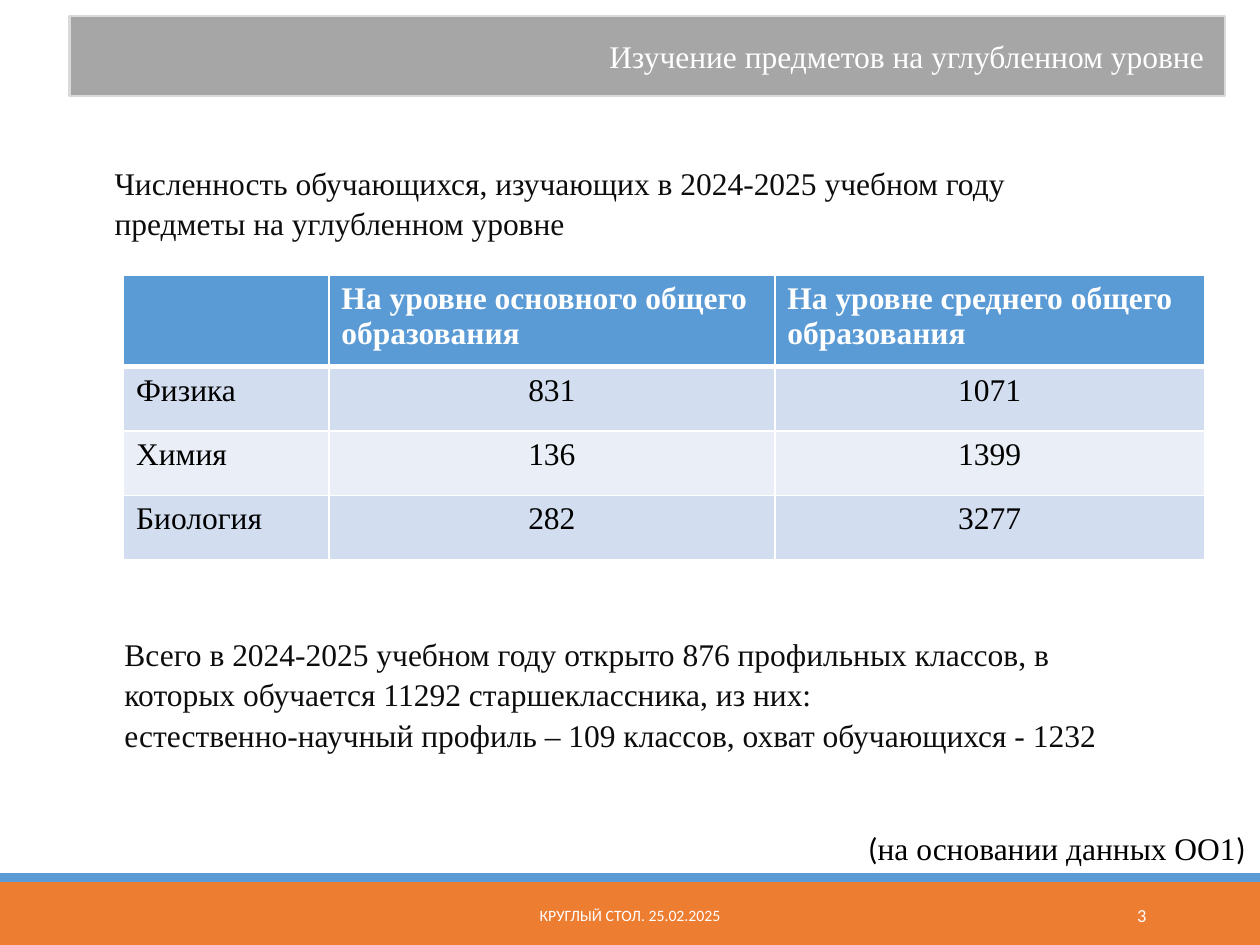
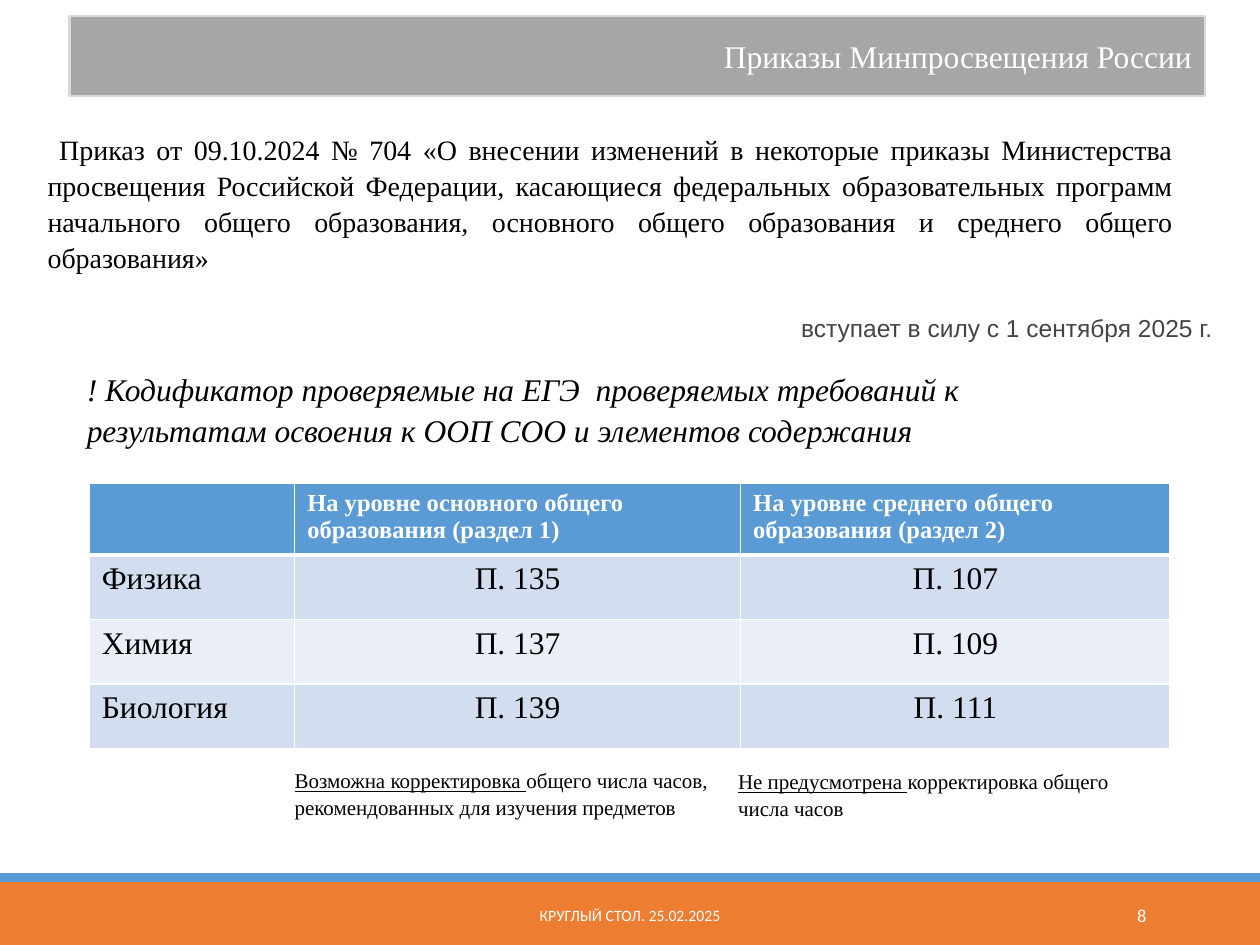
import dataclasses
import pptx
import pptx.util
import pptx.dml.color
import pptx.enum.shapes
import pptx.enum.text
import pptx.oxml
import pptx.oxml.ns

Cm, Pt = pptx.util.Cm, pptx.util.Pt
Align = pptx.enum.text.PP_ALIGN
Anchor = pptx.enum.text.MSO_ANCHOR
rgb = pptx.dml.color.RGBColor.from_string


@dataclasses.dataclass(frozen=True)
class Theme:
    serif: str = "Times New Roman"
    sans: str = "Calibri"
    plain: str = "Arial"
    white: str = "FFFFFF"
    black: str = "000000"
    ink: str = "0D0D0D"
    soft: str = "444444"
    blue: str = "5B9BD5"
    orange: str = "ED7D31"
    grey: str = "A6A6A6"
    edge: str = "D9D9D9"
    bands: tuple = ("D2DEEF", "EAEFF7")
    large: float = 18
    body: float = 16
    mid: float = 14
    small: float = 12
    page: float = 10.5
    foot: float = 9
    pitch: float = 1.07


look = Theme()


def write(par, text, size=look.large, color=look.black, font=look.serif, **style):
    run = par.add_run()
    run.text = text
    run.font.size = Pt(size)
    run.font.name = font
    run.font.color.rgb = rgb(color)
    for key, value in style.items():
        setattr(run.font, key, value)


def frame(slide, place, anchor=Anchor.TOP, align=Align.LEFT):
    text = slide.shapes.add_textbox(*map(Cm, place)).text_frame
    text.word_wrap = True
    text.vertical_anchor = anchor
    par = text.paragraphs[0]
    par.alignment = align
    par.line_spacing = look.pitch
    return par


pages = [
    dict(
        title="Изучение предметов на углубленном уровне ",
        width=23.29,
        number="3",
        spot=(2.49, 5.54),
        top=1.85,
        size=look.large,
        rows=[
            ["", "На уровне основного общего образования",
             "На уровне среднего общего образования"],
            ["Физика", "831", "1071"],
            ["Химия", "136", "1399"],
            ["Биология", "282", "3277"],
        ],
        notes=[
            ((2.06, 3.12, 20.85, 1.8), Align.LEFT, [[
                ("Численность обучающихся, изучающих в 2024-2025 учебном году "
                 "предметы на углубленном уровне", dict(color=look.ink))]]),
            ((2.26, 12.62, 20.85, 2.57), Align.LEFT, [
                [("Всего в 2024-2025 учебном году открыто 876 профильных классов, "
                  "в которых обучается 11292 старшеклассника, из них:",
                  dict(color=look.ink))],
                [("естественно-научный профиль – 109 классов, "
                  "охват обучающихся - 1232", dict(color=look.ink))]]),
            ((17.25, 16.54, 8.15, 1.02), Align.LEFT, [[
                ("(", dict(font=look.sans)),
                ("на основании данных ОО1", {}),
                (")", dict(font=look.sans))]]),
        ],
    ),
    dict(
        title="Приказы Минпросвещения России",
        width=22.89,
        number="8",
        spot=(1.8, 9.75),
        top=1.4,
        size=look.mid,
        rows=[
            ["", "На уровне основного общего образования (раздел 1)",
             "На уровне среднего общего образования (раздел 2)"],
            ["Физика", "П. 135", "П. 107"],
            ["Химия", "П. 137", "П. 109"],
            ["Биология", "П. 139", "П. 111"],
        ],
        notes=[
            ((0.71, 2.51, 23.19, 3), Align.JUSTIFY, [[
                (" Приказ от 09.10.2024 № 704 «О внесении изменений в некоторые "
                 "приказы Министерства просвещения Российской Федерации, касающиеся "
                 "федеральных образовательных программ начального общего образования, "
                 "основного общего образования и среднего общего образования»",
                 dict(size=look.body))]]),
            ((15.9, 6.15, 8.99, 0.86), Align.LEFT, [[
                ("вступает в силу с 1 сентября 2025 г.",
                 dict(size=look.mid, color=look.soft, font=look.plain))]]),
            ((1.5, 7.29, 21.31, 1.8), Align.LEFT, [[
                ("! Кодификатор проверяемые на ЕГЭ  проверяемых требований к "
                 "результатам освоения к ООП СОО и элементов содержания",
                 dict(italic=True))]]),
            ((5.69, 15.32, 8.99, 1.27), Align.LEFT, [[
                ("Возможна корректировка ", dict(size=look.small, underline=True)),
                ("общего числа часов, рекомендованных для изучения предметов",
                 dict(size=look.small))]]),
            ((14.63, 15.34, 8.99, 1.27), Align.LEFT, [[
                ("Не предусмотрена ", dict(size=look.small, underline=True)),
                ("корректировка общего числа часов", dict(size=look.small))]]),
        ],
    ),
]

deck = pptx.Presentation()
deck.slide_width, deck.slide_height = Cm(25.4), Cm(19.05)
layout = deck.slide_layouts[5]

for count, page in enumerate(pages):
    slide = deck.slides.add_slide(layout)

    if count == 0:
        for top, height, color in [(17.78, 1.27, look.orange), (17.6, 0.18, look.blue)]:
            band = slide.shapes.add_shape(
                pptx.enum.shapes.MSO_SHAPE.RECTANGLE,
                0, Cm(top), deck.slide_width, Cm(height))
            band.shadow.inherit = False
            band.fill.solid()
            band.fill.fore_color.rgb = rgb(color)
            band.line.fill.background()
            layout.shapes.element.append(band.element)

    title = slide.shapes.title
    title.left, title.top, title.width, title.height = map(
        Cm, (1.4, 0.33, page["width"], 1.6))
    title.fill.solid()
    title.fill.fore_color.rgb = rgb(look.grey)
    title.line.color.rgb = rgb(look.edge)
    title.line.width = Pt(1.25)
    title.text_frame.auto_size = pptx.enum.text.MSO_AUTO_SIZE.NONE
    title.text_frame.vertical_anchor = Anchor.MIDDLE
    par = title.text_frame.paragraphs[0]
    par.alignment = Align.RIGHT
    write(par, page["title"], color=look.white)

    par = frame(slide, (7.67, 17.93, 10.06, 1.02), Anchor.MIDDLE, Align.CENTER)
    write(par, "КРУГЛЫЙ СТОЛ. 25.02.2025", look.foot, look.white, look.sans)
    par = frame(slide, (20.62, 17.93, 2.74, 1.02), Anchor.MIDDLE, Align.RIGHT)
    write(par, page["number"], look.page, look.white, look.sans)

    widths = [4.14, 8.99, 8.66]
    heights = [page["top"], 1.3, 1.3, 1.3]
    size = sum(widths), sum(heights)
    table = slide.shapes.add_table(
        len(heights), len(widths), *map(Cm, page["spot"] + size)).table
    for col, width in zip(table.columns, widths):
        col.width = Cm(width)
    for row, height in zip(table.rows, heights):
        row.height = Cm(height)
    for r, row in enumerate(page["rows"]):
        for c, text in enumerate(row):
            cell = table.cell(r, c)
            props = cell.fill
            props.solid()
            props.fore_color.rgb = rgb(look.bands[(r - 1) % 2] if r else look.blue)
            par = cell.text_frame.paragraphs[0]
            if r and c:
                par.alignment = Align.CENTER
            if r:
                write(par, text)
            elif text:
                write(par, text, page["size"], look.white, bold=True)
            sides = dict(L=1, R=1, T=3 if r == 1 else 1, B=1 if r else 3)
            for spot, (side, weight) in enumerate(sides.items()):
                line = pptx.oxml.parse_xml(
                    f'<a:ln{side} {pptx.oxml.ns.nsdecls("a")} w="{Pt(weight)}">'
                    f'<a:solidFill><a:srgbClr val="{look.white}"/></a:solidFill>'
                    f'</a:ln{side}>')
                cell._tc.get_or_add_tcPr().insert(spot, line)

    for place, align, lines in page["notes"]:
        par = first = frame(slide, place, align=align)
        for i, runs in enumerate(lines):
            if i:
                par = first._parent.add_paragraph()
                par.alignment = align
                par.line_spacing = look.pitch
            for text, style in runs:
                write(par, text, **style)

deck.save("out.pptx")
